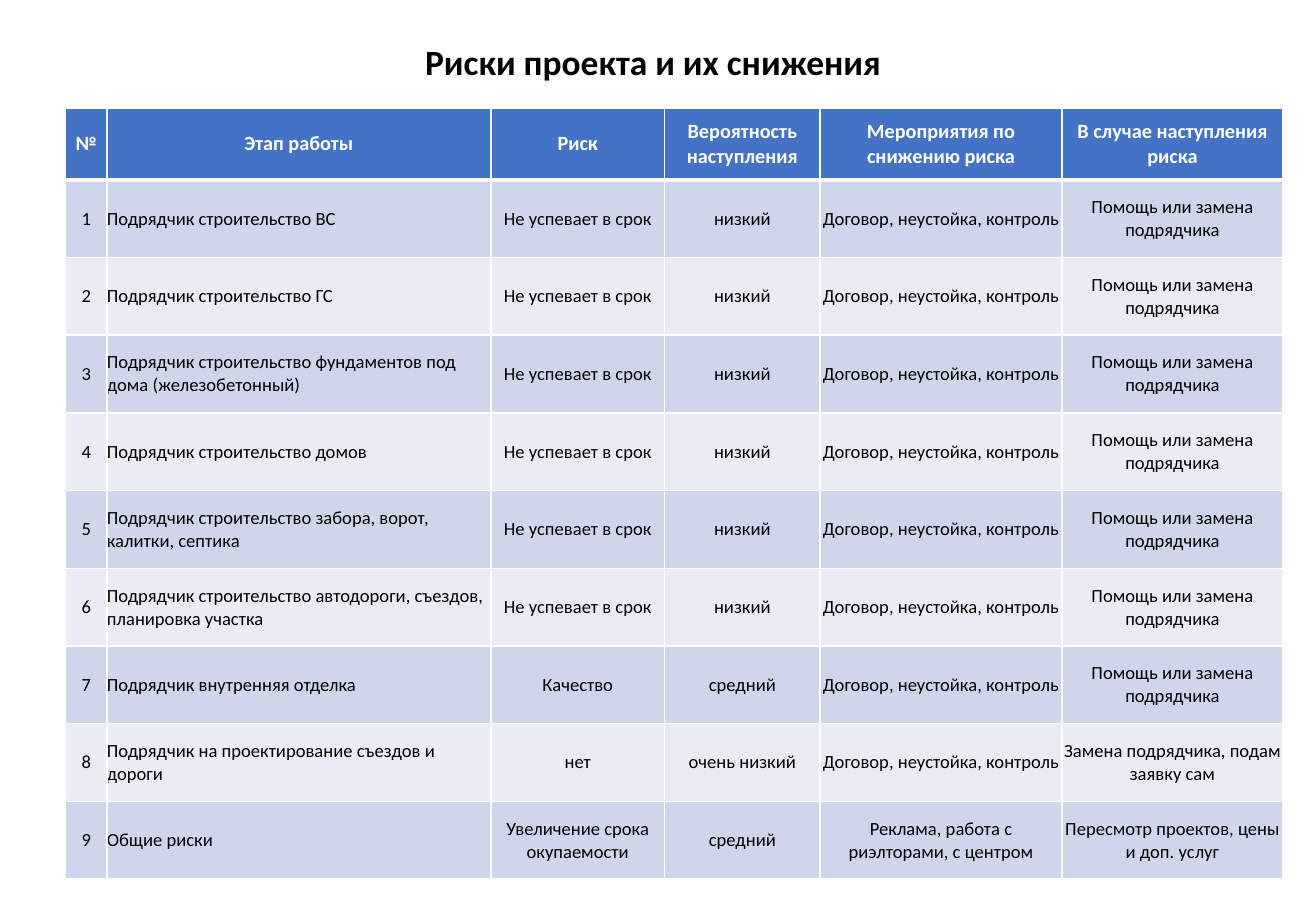
from lxml import etree
from pptx import Presentation
from pptx import util as u
from pptx.dml.color import RGBColor
from pptx.enum import text
from pptx.oxml.ns import qn

COLORS = {"header": "4472C4", "odd": "CFD5EA", "even": "E9EBF5",
          "white": "FFFFFF", "black": "000000"}

# Slide
prs = Presentation()
prs.slide_width, prs.slide_height = u.Inches(10.83), u.Inches(7.5)
slide = prs.slides.add_slide(prs.slide_layouts[6])


def style_text(paragraph, size, color, bold):
    font = paragraph.runs[0].font
    font.name, font.size, font.bold = "Calibri", u.Pt(size), bold
    font.color.rgb = RGBColor.from_string(COLORS[color])


# Risk table content
late, low = "Не успевает в срок", "низкий"
contract = "Договор, неустойка, контроль"
replace = "Помощь или замена подрядчика"
builder = "Подрядчик строительство "
header = ["№", "Этап работы", "Риск", "Вероятность наступления",
          "Мероприятия по снижению риска", "В случае наступления риска"]
late_works = ["ВС", "ГС", "фундаментов под дома (железобетонный)", "домов",
              "забора, ворот, калитки, септика",
              "автодороги, съездов, планировка участка"]
risks = [[builder + work, late, low, contract, replace] for work in late_works]
risks += [
    ["Подрядчик внутренняя отделка", "Качество", "средний", contract, replace],
    ["Подрядчик на проектирование съездов и дороги", "нет", "очень низкий",
     contract, "Замена подрядчика, подам заявку сам"],
    ["Общие риски", "Увеличение срока окупаемости", "средний",
     "Реклама, работа с риэлторами, с центром",
     "Пересмотр проектов, цены и доп. услуг"],
]
rows = [header] + [[str(n), *risk] for n, risk in enumerate(risks, 1)]

# Table grid
column_widths = [0.34, 3.16, 1.43, 1.28, 1.99, 1.82]
header_height, row_height = 0.59, 0.64
risk_table = slide.shapes.add_table(
    len(rows), len(header), u.Inches(0.54), u.Inches(0.89),
    u.Inches(sum(column_widths)),
    u.Inches(header_height + row_height * len(risks))).table
for column, width in zip(risk_table.columns, column_widths):
    column.width = u.Inches(width)

# Table cells
for r, row in enumerate(rows):
    risk_table.rows[r].height = u.Inches(row_height if r else header_height)
    band = "header" if r == 0 else "odd" if r % 2 else "even"
    for c, wording in enumerate(row):
        cell = risk_table.cell(r, c)
        cell.margin_left = cell.margin_right = 0
        cell.margin_top = cell.margin_bottom = 0
        cell.vertical_anchor = text.MSO_ANCHOR.MIDDLE
        cell.fill.solid()
        cell.fill.fore_color.rgb = RGBColor.from_string(COLORS[band])
        paragraph = cell.text_frame.paragraphs[0]
        paragraph.text = wording
        left_aligned = r > 0 and c == 1
        paragraph.alignment = (text.PP_ALIGN.LEFT if left_aligned
                               else text.PP_ALIGN.CENTER)
        if r == 0:
            style_text(paragraph, 12, "white", True)
        else:
            style_text(paragraph, 11, "black", False)

        # White borders, thicker between the header and the body
        top = 3 if r == 1 else 1
        bottom = 3 if r == 0 else 1
        edges = [("a:lnL", 1), ("a:lnR", 1), ("a:lnT", top), ("a:lnB", bottom)]
        for position, (edge, points) in enumerate(edges):
            line = etree.Element(qn(edge), w=str(u.Pt(points)))
            solid = etree.SubElement(line, qn("a:solidFill"))
            etree.SubElement(solid, qn("a:srgbClr"), val=COLORS["white"])
            cell._tc.get_or_add_tcPr().insert(position, line)

# Title
title = slide.shapes.add_textbox(u.Inches(3.4), u.Inches(0.28),
                                 u.Inches(4.98), u.Inches(0.45)).text_frame
title.word_wrap = True
title.auto_size = text.MSO_AUTO_SIZE.SHAPE_TO_FIT_TEXT
title.text = "Риски проекта и их снижения"
style_text(title.paragraphs[0], 21, "black", True)

prs.save("out.pptx")
